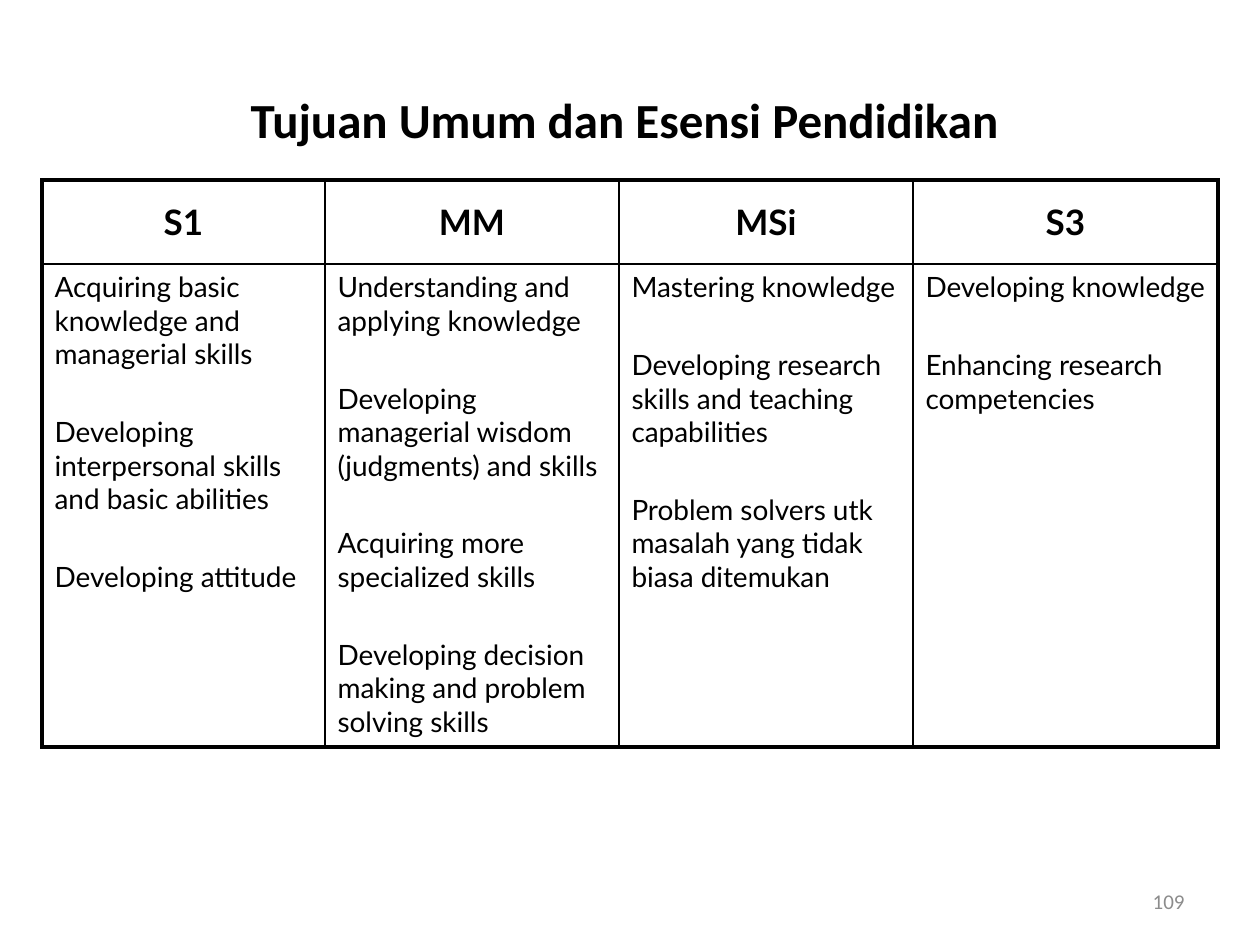
import dataclasses

import lxml.etree
import pptx
import pptx.dml.color
import pptx.enum.text
import pptx.oxml.ns
import pptx.util

ALIGN = pptx.enum.text.PP_ALIGN
ANCHOR = pptx.enum.text.MSO_ANCHOR
EMU_PER_PX = 914400 / 126


def px(length):
    return pptx.util.Emu(round(length * EMU_PER_PX))


@dataclasses.dataclass(frozen=True)
class Theme:
    ink: str = "000000"
    muted: str = "8C8C8C"
    plain_font: str = "Calibri"
    table_font: str = "Lato"
    title_size: int = 28
    header_size: int = 20
    body_size: int = 16
    number_size: int = 12
    item_gap: float = 25.4
    outer_line: float = 2.25
    inner_line: float = 1


def write_text(frame, paragraphs, *, font, size, color, bold=False,
               align=ALIGN.LEFT, anchor=ANCHOR.TOP, gap=0):
    """Fill a text frame, with gap points between its paragraphs."""
    frame.word_wrap = True
    frame.vertical_anchor = anchor
    for index, text in enumerate(paragraphs):
        para = frame.paragraphs[0] if index == 0 else frame.add_paragraph()
        para.alignment = align
        if index:
            para.space_before = pptx.util.Pt(gap)
        span = para.add_run()
        span.text = text
        span.font.name = font
        span.font.size = pptx.util.Pt(size)
        span.font.bold = bold
        span.font.color.rgb = pptx.dml.color.RGBColor.from_string(color)


def draw_borders(cell, widths, color):
    """Add cell borders; widths are points for left, right, top, bottom."""
    qn = pptx.oxml.ns.qn
    properties = cell._tc.get_or_add_tcPr()
    for index, (side, width) in enumerate(zip("LRTB", widths)):
        line = lxml.etree.Element(qn(f"a:ln{side}"), w=str(pptx.util.Pt(width)))
        fill = lxml.etree.SubElement(line, qn("a:solidFill"))
        lxml.etree.SubElement(fill, qn("a:srgbClr"), val=color)
        properties.insert(index, line)


class SlideBuilder:
    def __init__(self, page, theme):
        self.page = page
        self.theme = theme

    def text(self, left, top, width, height, content, **style):
        box = self.page.shapes.add_textbox(px(left), px(top), px(width), px(height))
        write_text(box.text_frame, [content], font=self.theme.plain_font, **style)

    def table(self, left, top, widths, heights, columns):
        """Add a table from (heading, items) pairs, one pair per column."""
        theme = self.theme
        table = self.page.shapes.add_table(
            len(heights), len(columns), px(left), px(top),
            px(sum(widths)), px(sum(heights))).table
        table.first_row = False
        table.horz_banding = False
        for row, height in zip(table.rows, heights):
            row.height = px(height)
        last = len(columns) - 1
        for index, (heading, items) in enumerate(columns):
            table.columns[index].width = px(widths[index])
            header, body = table.cell(0, index), table.cell(1, index)
            write_text(header.text_frame, [heading], font=theme.table_font,
                       size=theme.header_size, color=theme.ink, bold=True,
                       align=ALIGN.CENTER)
            header.vertical_anchor = ANCHOR.MIDDLE
            write_text(body.text_frame, items, font=theme.table_font,
                       size=theme.body_size, color=theme.ink, gap=theme.item_gap)
            outer, inner = theme.outer_line, theme.inner_line
            sides = [outer if index == 0 else inner,
                     outer if index == last else inner]
            for cell, edges in ((header, [outer, inner]), (body, [inner, outer])):
                cell.fill.background()
                draw_borders(cell, sides + edges, theme.ink)


GOALS = [
    ("S1", ["Acquiring basic knowledge and managerial skills",
            "Developing interpersonal skills and basic abilities",
            "Developing attitude"]),
    ("MM", ["Understanding and applying knowledge",
            "Developing managerial wisdom (judgments) and skills",
            "Acquiring more specialized skills",
            "Developing decision making and problem solving skills"]),
    ("MSi", ["Mastering knowledge",
             "Developing research skills and teaching capabilities",
             "Problem solvers utk masalah yang tidak biasa ditemukan"]),
    ("S3", ["Developing knowledge",
            "Enhancing research competencies"]),
]


def main():
    deck = pptx.Presentation()
    deck.slide_width, deck.slide_height = px(1260), px(945)
    theme = Theme()
    slide = SlideBuilder(deck.slides.add_slide(deck.slide_layouts[6]), theme)
    slide.text(21, 83, 1207, 78, "Tujuan Umum dan Esensi Pendidikan",
               size=theme.title_size, color=theme.ink, bold=True,
               align=ALIGN.CENTER)
    slide.table(42, 180, [283, 294, 294, 305], [84, 483], GOALS)
    slide.text(903, 876, 294, 50, "109", size=theme.number_size,
               color=theme.muted, align=ALIGN.RIGHT, anchor=ANCHOR.MIDDLE)
    deck.save("out.pptx")


if __name__ == "__main__":
    main()
